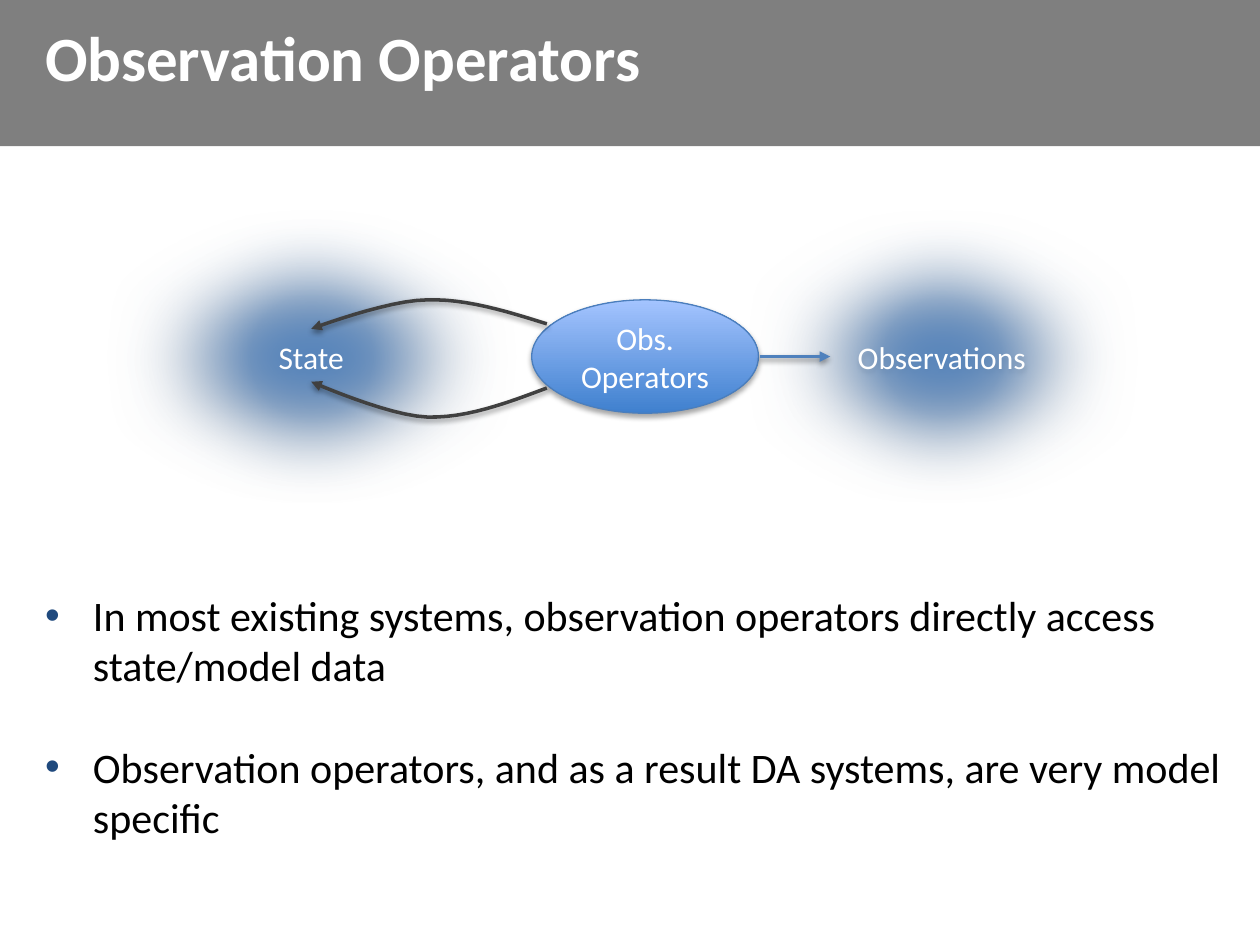
from lxml.etree import SubElement
from pptx import Presentation
from pptx.dml.color import RGBColor
from pptx.enum.shapes import MSO_CONNECTOR as Connector, MSO_SHAPE as Shape
from pptx.enum.text import MSO_ANCHOR as Anchor, PP_ALIGN as Align
from pptx.oxml import parse_xml
from pptx.oxml.ns import nsdecls, qn
from pptx.util import Inches, Pt

WHITE = RGBColor(0xFF, 0xFF, 0xFF)
BLACK = RGBColor(0, 0, 0)
BLUE = RGBColor(0x4F, 0x81, 0xBD)
DEEP_BLUE = RGBColor(0x3F, 0x80, 0xCE)
PALE_BLUE = RGBColor(0xA4, 0xC4, 0xFF)
OUTLINE = RGBColor(0x4B, 0x7E, 0xBC)
BULLET = RGBColor(0x1F, 0x49, 0x7D)
CHARCOAL = RGBColor(0x40, 0x40, 0x40)
FONT = "Calibri"

TITLE = "Observation Operators"
POINTS = [
    "In most existing systems, observation operators directly access state/model data",
    "Observation operators, and as a result DA systems, are very model specific",
]
OBSERVATIONS = ("Observations", (5.56, 1.52, 3.83, 2.62))
OPERATORS = ("Obs. Operators", (4.22, 2.38, 1.8, 0.9))
STATE = ("State", (0.43, 1.52, 4.08, 2.62))
CURVES = [
    [((4.34, 2.57), (4.02, 2.47), (3.7, 2.37), (3.39, 2.38)),
     ((3.39, 2.38), (3.08, 2.38), (2.47, 2.61), (2.47, 2.61))],
    [((4.34, 3.08), (4.02, 3.2), (3.7, 3.32), (3.39, 3.31)),
     ((3.39, 3.31), (3.08, 3.3), (2.47, 3.03), (2.47, 3.03))],
]
CURVE_STEPS = 12


def style(para, size, color, bold=False):
    para.font.name = FONT
    para.font.size = Pt(size)
    para.font.color.rgb = color
    para.font.bold = bold


def add_effects(shape, opacity, distance, soft_edge=0):
    properties = shape._element.spPr
    for old in properties.findall(qn("a:effectLst")):
        properties.remove(old)
    edge = f'<a:softEdge rad="{Pt(soft_edge)}"/>' if soft_edge else ""
    properties.append(parse_xml(
        f'<a:effectLst {nsdecls("a")}><a:outerShdw blurRad="{Pt(3.1)}" '
        f'dist="{Pt(distance)}" dir="5400000" rotWithShape="0"><a:srgbClr val="000000">'
        f'<a:alpha val="{opacity * 1000}"/></a:srgbClr></a:outerShdw>{edge}</a:effectLst>'))


def add_text_box(page, area, anchor=Anchor.TOP):
    frame = page.shapes.add_textbox(*map(Inches, area)).text_frame
    frame.word_wrap = True
    frame.vertical_anchor = anchor
    return frame


def add_ellipse(page, label, area, stops):
    shape = page.shapes.add_shape(Shape.OVAL, *map(Inches, area))
    shape.fill.gradient()
    shape.fill.gradient_angle = 90
    for stop, (position, color) in zip(shape.fill.gradient_stops, stops):
        stop.position = position
        stop.color.rgb = color
    shape.line.fill.background()
    frame = shape.text_frame
    frame.word_wrap = True
    frame.vertical_anchor = Anchor.MIDDLE
    para = frame.paragraphs[0]
    para.text = label
    para.alignment = Align.CENTER
    style(para, 18, WHITE)
    return shape


def add_cloud(page, label, area):
    shape = add_ellipse(page, label, area, [(0.2, BLUE), (1, WHITE)])
    gradient = shape._element.spPr.find(qn("a:gradFill"))
    gradient.replace(gradient.find(qn("a:lin")), parse_xml(
        f'<a:path {nsdecls("a")} path="circle">'
        '<a:fillToRect l="50000" t="50000" r="50000" b="50000"/></a:path>'))
    add_effects(shape, 35, 1.8, soft_edge=50)


def finish_arrow(arrow, color):
    arrow.line.color.rgb = color
    arrow.line.width = Pt(2)
    SubElement(arrow.line._get_or_add_ln(), qn("a:tailEnd"), type="triangle")
    add_effects(arrow, 38, 1.6)


def bezier_point(points, t):
    weights = ((1 - t) ** 3, 3 * t * (1 - t) ** 2, 3 * t ** 2 * (1 - t), t ** 3)
    return tuple(Inches(sum(w * p[axis] for w, p in zip(weights, points))) for axis in (0, 1))


def add_curve(page, segments):
    start = bezier_point(segments[0], 0)
    builder = page.shapes.build_freeform(*start)
    builder.add_line_segments(
        [bezier_point(points, step / CURVE_STEPS)
         for points in segments for step in range(1, CURVE_STEPS + 1)], close=False)
    curve = builder.convert_to_shape()
    curve.fill.background()
    finish_arrow(curve, CHARCOAL)


def add_bullet(para):
    properties = para._p.get_or_add_pPr()
    properties.set("marL", str(Inches(0.38)))
    properties.set("indent", str(Inches(-0.38)))
    color = SubElement(properties, qn("a:buClr"))
    SubElement(color, qn("a:srgbClr"), val=str(BULLET))
    SubElement(properties, qn("a:buFont"), typeface="Arial")
    SubElement(properties, qn("a:buChar"), char="•")


def main():
    deck = Presentation()
    deck.slide_width, deck.slide_height = Inches(10), Inches(7.5)
    page = deck.slides.add_slide(deck.slide_layouts[6])

    band = page.shapes.add_shape(Shape.RECTANGLE, 0, 0, Inches(10), Inches(1.16))
    band.shadow.inherit = False
    band.fill.solid()
    band.fill.fore_color.rgb = BLACK
    color = band._element.spPr.find(qn("a:solidFill"))[0]
    SubElement(color, qn("a:alpha"), val="50000")
    band.line.fill.background()

    title = add_text_box(page, (0.26, 0, 9.24, 0.89), Anchor.MIDDLE).paragraphs[0]
    title.text = TITLE
    style(title, 36, WHITE, bold=True)

    body = add_text_box(page, (0.26, 4.63, 9.6, 2.12))
    for index, point in enumerate(POINTS):
        para = body.add_paragraph() if index else body.paragraphs[0]
        para.text = point
        add_bullet(para)
        if index:
            para.space_before = Pt(29)
        style(para, 24, BLACK)

    add_cloud(page, *OBSERVATIONS)
    operators = add_ellipse(page, *OPERATORS, [(0, DEEP_BLUE), (1, PALE_BLUE)])
    operators.line.color.rgb = OUTLINE
    operators.line.width = Pt(0.75)
    add_effects(operators, 35, 1.8)

    arrow = page.shapes.add_connector(
        Connector.STRAIGHT, *map(Inches, (6.03, 2.83, 6.59, 2.83)))
    finish_arrow(arrow, BLUE)

    add_cloud(page, *STATE)
    for segments in CURVES:
        add_curve(page, segments)

    deck.save("out.pptx")


if __name__ == "__main__":
    main()
